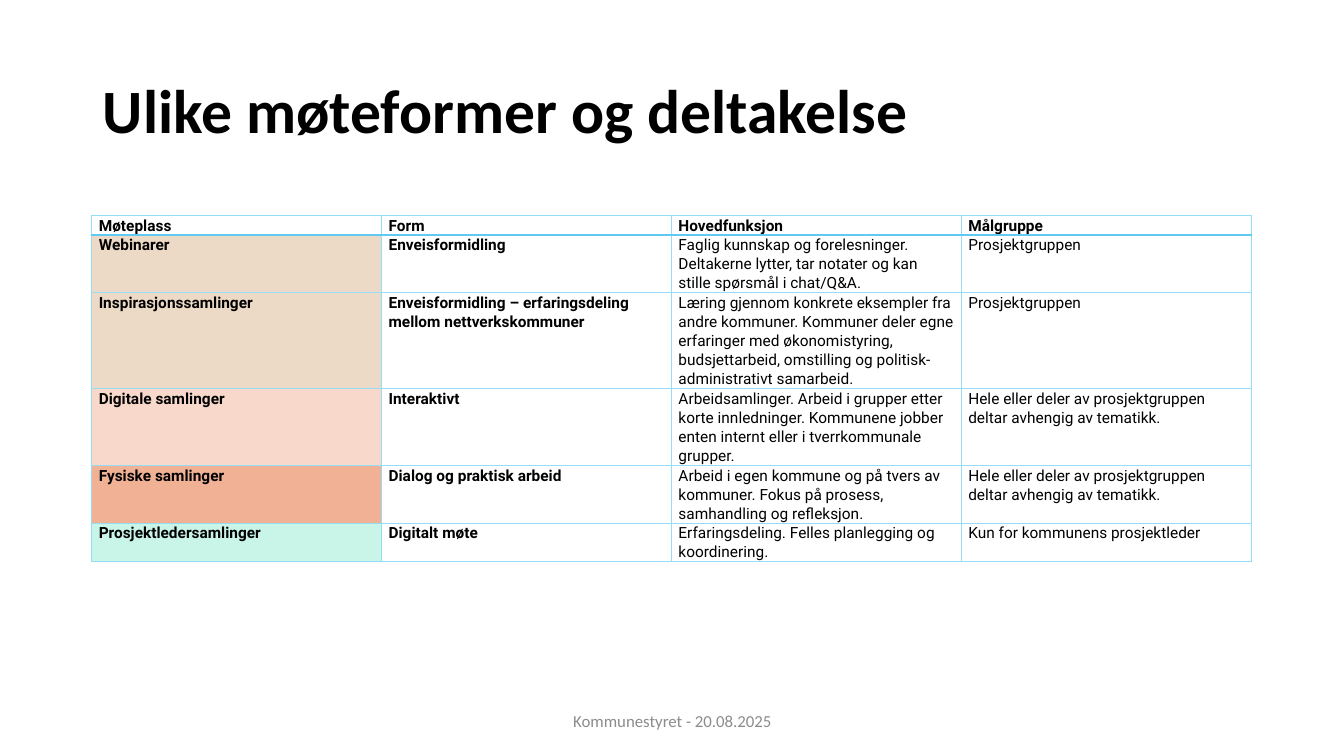
import pptx
import pptx.dml.color
import pptx.enum.text
import pptx.oxml
import pptx.oxml.ns
import pptx.util
from pptx.util import Inches

LINE_HEIGHT = 0.19
BORDER = ("95DCF7", 1)
HEADER_RULE = ("60CAF3", 1.5)

HEADER = ("Møteplass", "Form", "Hovedfunksjon", "Målgruppe")
# Each meeting: colour of its first cell, lines of text, cell texts
MEETINGS = [
    ("ECD9C6", 3, (
        "Webinarer", "Enveisformidling",
        "Faglig kunnskap og forelesninger. Deltakerne lytter, tar notater og kan "
        "stille spørsmål i chat/Q&A.",
        "Prosjektgruppen")),
    ("ECD9C6", 5, (
        "Inspirasjonssamlinger",
        "Enveisformidling – erfaringsdeling mellom nettverkskommuner",
        "Læring gjennom konkrete eksempler fra andre kommuner. Kommuner deler egne "
        "erfaringer med økonomistyring, budsjettarbeid, omstilling og "
        "politisk-administrativt samarbeid.",
        "Prosjektgruppen")),
    ("F8D8CA", 4, (
        "Digitale samlinger", "Interaktivt",
        "Arbeidsamlinger. Arbeid i grupper etter korte innledninger. Kommunene jobber "
        "enten internt eller i tverrkommunale grupper.",
        "Hele eller deler av prosjektgruppen deltar avhengig av tematikk.")),
    ("F0B195", 3, (
        "Fysiske samlinger", "Dialog og praktisk arbeid",
        "Arbeid i egen kommune og på tvers av kommuner. Fokus på prosess, "
        "samhandling og refleksjon.",
        "Hele eller deler av prosjektgruppen deltar avhengig av tematikk.")),
    ("C8F5E8", 2, (
        "Prosjektledersamlinger", "Digitalt møte",
        "Erfaringsdeling. Felles planlegging og koordinering.",
        "Kun for kommunens prosjektleder")),
]


def color(value):
    return pptx.dml.color.RGBColor.from_string(value)


def format_text(paragraph, font_name, size, text_color, bold=False):
    for run in paragraph.runs:
        run.font.name = font_name
        run.font.size = pptx.util.Pt(size)
        run.font.bold = bold
        run.font.color.rgb = color(text_color)


def set_borders(cell, top, bottom):
    properties = cell._tc.get_or_add_tcPr()
    sides = (("lnL", BORDER), ("lnR", BORDER), ("lnT", top), ("lnB", bottom))
    for index, (tag, (line_color, width)) in enumerate(sides):
        properties.insert(index, pptx.oxml.parse_xml(
            f'<a:{tag} {pptx.oxml.ns.nsdecls("a")} w="{pptx.util.Pt(width)}">'
            f'<a:solidFill><a:srgbClr val="{line_color}"/></a:solidFill></a:{tag}>'))


def fill_cell(cell, text, bold, fill_color=None):
    cell.margin_left = cell.margin_right = Inches(0.07)
    cell.margin_top = cell.margin_bottom = 0
    if fill_color:
        cell.fill.solid()
        cell.fill.fore_color.rgb = color(fill_color)
    else:
        cell.fill.background()
    paragraph = cell.text_frame.paragraphs[0]
    paragraph.text = text
    paragraph.line_spacing = 1.07
    paragraph.space_after = pptx.util.Pt(8)
    format_text(paragraph, "Roboto", 11, "000000", bold)


def add_title(slide, text):
    title = slide.shapes.title
    title.left, title.top = Inches(0.92), Inches(0.4)
    title.width, title.height = Inches(11.5), Inches(1.45)
    title.text_frame.text = text
    title.text_frame.vertical_anchor = pptx.enum.text.MSO_ANCHOR.MIDDLE
    paragraph = title.text_frame.paragraphs[0]
    paragraph.alignment = pptx.enum.text.PP_ALIGN.LEFT
    paragraph.line_spacing = 0.9
    format_text(paragraph, "Calibri", 44, "000000", bold=True)


def add_meeting_table(slide):
    rows = [(None, 1, HEADER)] + MEETINGS
    height = LINE_HEIGHT * sum(lines for _, lines, _ in rows)
    table = slide.shapes.add_table(
        len(rows), len(HEADER),
        Inches(0.91), Inches(2.14), Inches(11.5), Inches(height)).table
    table.first_row = table.horz_banding = False
    for row_index, (fill_color, lines, texts) in enumerate(rows):
        table.rows[row_index].height = Inches(LINE_HEIGHT * lines)
        top = HEADER_RULE if row_index == 1 else BORDER
        bottom = HEADER_RULE if row_index == 0 else BORDER
        for column_index, text in enumerate(texts):
            cell = table.cell(row_index, column_index)
            fill_cell(cell, text, bold=row_index == 0 or column_index < 2,
                      fill_color=fill_color if column_index == 0 else None)
            set_borders(cell, top, bottom)


def add_footer(slide, text):
    footer = slide.shapes.add_textbox(
        Inches(4.42), Inches(6.95), Inches(4.5), Inches(0.4))
    footer.text_frame.word_wrap = True
    footer.text_frame.vertical_anchor = pptx.enum.text.MSO_ANCHOR.MIDDLE
    footer.text_frame.text = text
    paragraph = footer.text_frame.paragraphs[0]
    paragraph.alignment = pptx.enum.text.PP_ALIGN.CENTER
    format_text(paragraph, "Calibri", 12, "8C8C8C")


def main():
    presentation = pptx.Presentation()
    presentation.slide_width = Inches(13.33)
    presentation.slide_height = Inches(7.5)
    # Title-only layout
    slide = presentation.slides.add_slide(presentation.slide_layouts[5])
    add_title(slide, "Ulike møteformer og deltakelse")
    add_meeting_table(slide)
    add_footer(slide, "Kommunestyret - 20.08.2025")
    presentation.save("out.pptx")


if __name__ == "__main__":
    main()
